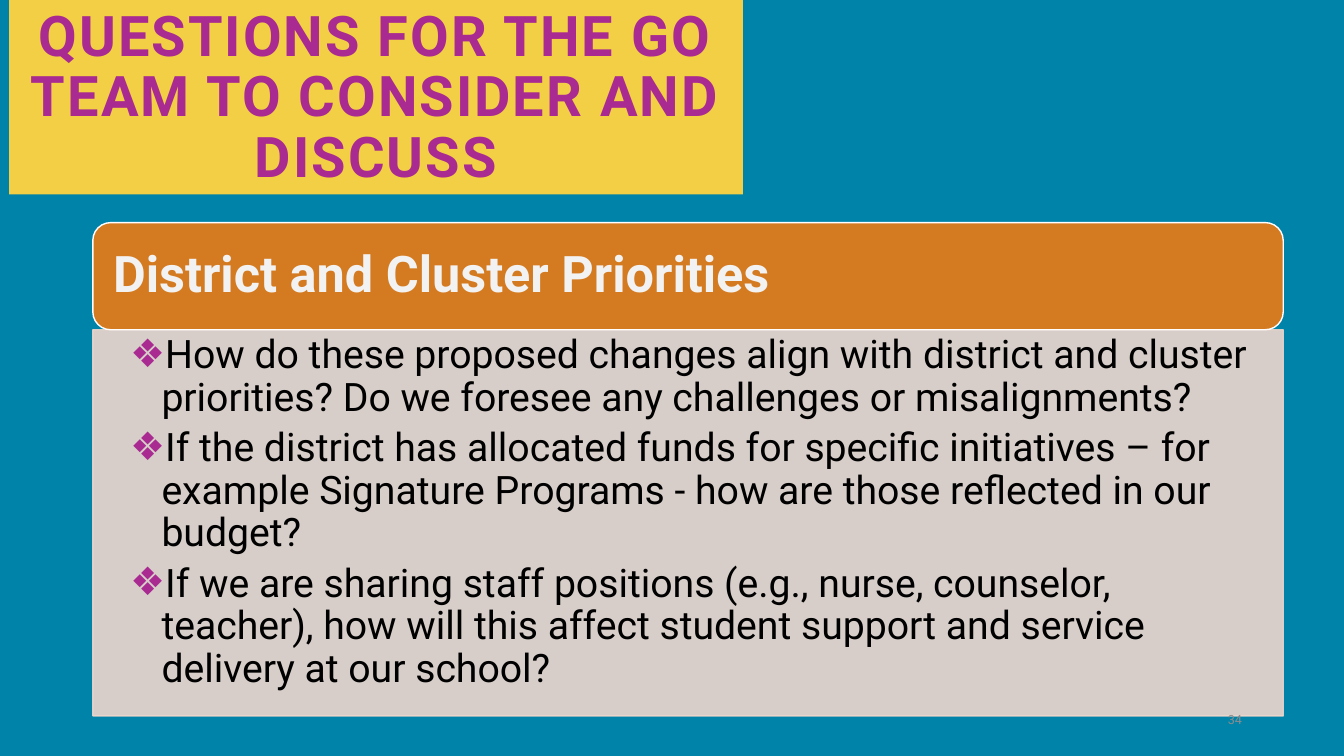
"""Build the slide of district and cluster questions for the GO Team."""
from dataclasses import dataclass, field

from lxml import etree
from pptx import Presentation
from pptx import util as u
from pptx.dml import color
from pptx.enum import shapes, text
from pptx.oxml import ns

PURPLE = "A92A91"
SAND = "EFD7CD"
LEFT, WIDTH = 2.34, 30.0
HEADER_TOP, HEADER_HEIGHT = 5.61, 2.7
QUESTIONS = [
    "How do these proposed changes align with district and cluster priorities? "
    "Do we foresee any challenges or misalignments?",
    "If the district has allocated funds for specific initiatives – for example "
    "Signature Programs - how are those reflected in our budget?",
    "If we are sharing staff positions (e.g., nurse, counselor, teacher), how will "
    "this affect student support and service delivery at our school?",
]


@dataclass
class Block:
    box: tuple[float, float, float, float]
    lines: list[str]
    size: float
    ink: str
    bold: bool = False
    align: text.PP_ALIGN = text.PP_ALIGN.LEFT
    anchor: text.MSO_ANCHOR = text.MSO_ANCHOR.MIDDLE
    insets: tuple[float, float, float, float] = (0.25, 0.13, 0.25, 0.13)
    fill: str | None = None
    outline: str | None = None
    paragraph: dict = field(default_factory=dict)


def rgb(value: str) -> color.RGBColor:
    return color.RGBColor.from_string(value)


def assign(target, values: dict) -> None:
    for name, value in values.items():
        setattr(target, name, value)


def draw(shape, block: Block) -> None:
    left, top, width, height = map(u.Cm, block.box)
    assign(shape, {"left": left, "top": top, "width": width, "height": height})
    if block.fill:
        shape.fill.solid()
        shape.fill.fore_color.rgb = rgb(block.fill)
    if block.outline:
        shape.line.color.rgb = rgb(block.outline)
        shape.line.width = u.Pt(1)
    frame = shape.text_frame
    frame.text = "\n".join(block.lines)
    sides = ("margin_left", "margin_top", "margin_right", "margin_bottom")
    assign(frame, dict(zip(sides, map(u.Cm, block.insets))))
    assign(frame, {"word_wrap": True, "auto_size": text.MSO_AUTO_SIZE.NONE,
                   "vertical_anchor": block.anchor})
    for paragraph in frame.paragraphs:
        assign(paragraph, {"alignment": block.align, "line_spacing": 0.9,
                           "space_before": u.Pt(0)} | block.paragraph)
        font = paragraph.runs[0].font
        assign(font, {"name": "Roboto", "size": u.Pt(block.size), "bold": block.bold})
        font.color.rgb = rgb(block.ink)


def add_bullets(frame, mark: str, ink: str, indent: float) -> None:
    for paragraph in frame.paragraphs:
        properties = paragraph._p.get_or_add_pPr()
        properties.set("marL", str(u.Cm(indent)))
        properties.set("indent", str(-u.Cm(indent)))
        tint = etree.SubElement(properties, ns.qn("a:buClr"))
        etree.SubElement(tint, ns.qn("a:srgbClr"), val=ink)
        etree.SubElement(properties, ns.qn("a:buChar"), char=mark)


def soften(shape, percent: int) -> None:
    for tone in shape._element.spPr.iter(ns.qn("a:srgbClr")):
        etree.SubElement(tone, ns.qn("a:alpha"), val=str(percent * 1000))


def main() -> None:
    deck = Presentation()
    assign(deck, {"slide_width": u.Cm(33.87), "slide_height": u.Cm(19.05)})
    slide = deck.slides.add_slide(deck.slide_layouts[1])
    slide.background.fill.solid()
    slide.background.fill.fore_color.rgb = rgb("0083A9")

    heading = slide.shapes.title
    draw(heading, Block((0.23, 0, 18.49, 4.9),
                        ["QUESTIONS FOR THE GO TEAM TO CONSIDER AND DISCUSS"],
                        40, PURPLE, True, text.PP_ALIGN.CENTER,
                        text.MSO_ANCHOR.BOTTOM, fill="F3CF45"))
    heading.text_frame.paragraphs[0].runs[0].font._element.set("spc", "150")

    questions = slide.placeholders[1]
    draw(questions, Block((LEFT, HEADER_TOP + HEADER_HEIGHT, WIDTH, 9.73), QUESTIONS,
                          28, "000000", anchor=text.MSO_ANCHOR.TOP,
                          insets=(0.94, 0.13, 0.71, 0.13), fill=SAND, outline=SAND,
                          paragraph={"space_after": u.Pt(6)}))
    add_bullets(questions.text_frame, "❖", PURPLE, 0.79)
    soften(questions, 90)

    priorities = slide.shapes.add_shape(shapes.MSO_SHAPE.ROUNDED_RECTANGLE, 0, 0, 0, 0)
    priorities.shadow.inherit = False
    draw(priorities, Block((LEFT, HEADER_TOP, WIDTH, HEADER_HEIGHT),
                           ["District and Cluster Priorities"], 36, "F2F2F2", True,
                           insets=(0.38, 0.38, 0.38, 0.38),
                           fill="D47B22", outline="FFFFFF"))

    page_number = slide.shapes.add_textbox(0, 0, 0, 0)
    draw(page_number, Block((23.93, 17.65, 7.62, 1.02), ["34"], 9, "8C8C8C",
                            align=text.PP_ALIGN.RIGHT))
    deck.save("out.pptx")


if __name__ == "__main__":
    main()
